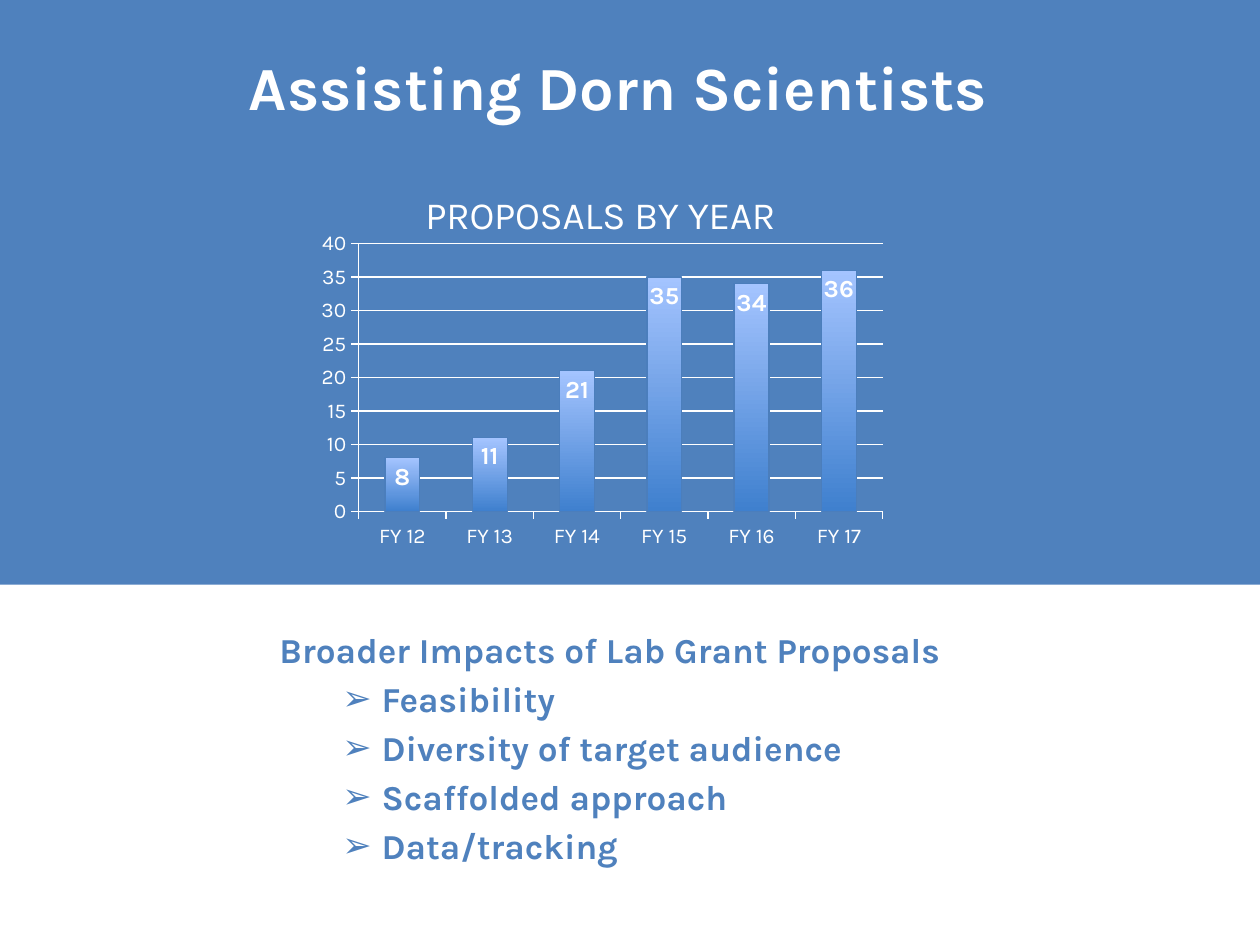
"""Build a slide with a proposals-by-year chart above a list of impact criteria."""
from dataclasses import dataclass

from lxml import etree
from pptx import Presentation
from pptx.chart.data import CategoryChartData
from pptx.dml.color import RGBColor
from pptx.enum.chart import XL_CHART_TYPE, XL_LABEL_POSITION, XL_TICK_MARK
from pptx.enum.shapes import MSO_SHAPE
from pptx.enum.text import MSO_ANCHOR, PP_ALIGN
from pptx.oxml.ns import qn
from pptx.util import Inches, Pt

COLUMN = XL_CHART_TYPE.COLUMN_STACKED
INSIDE_END = XL_LABEL_POSITION.INSIDE_END
TICK_OUT = XL_TICK_MARK.OUTSIDE
RECT = MSO_SHAPE.RECTANGLE
TOP, MIDDLE = MSO_ANCHOR.TOP, MSO_ANCHOR.MIDDLE
LEFT, CENTER = PP_ALIGN.LEFT, PP_ALIGN.CENTER


@dataclass(frozen=True)
class Theme:
    """Colours, fonts and type sizes."""
    white: str = "FFFFFF"
    blue: str = "4F81BD"
    bar_edge: str = "4B7EBC"
    bar_stops: tuple = ("3F80CE", "A4C4FF")
    font: str = "Karla"
    chart_font: str = "Calibri"
    title: int = 35
    body: int = 20
    chart_title: int = 22
    chart: int = 18
    label: int = 14
    axis: int = 12


THEME = Theme()
TITLE = "Assisting Dorn Scientists"
HEADING = "Broader Impacts of Lab Grant Proposals"
CRITERIA = ["Feasibility", "Diversity of target audience", "Scaffolded approach", "Data/tracking"]
CHART_TITLE = "PROPOSALS BY YEAR"
PROPOSALS = {"FY 12": 8, "FY 13": 11, "FY 14": 21, "FY 15": 35, "FY 16": 34, "FY 17": 36}

BANDS = [((0, 0, 10, 7.5), THEME.white), ((0, 0, 10, 4.64), THEME.blue)]
TITLE_BOX = (0.7, 0.16, 8.42, 1.04)
BODY_BOX = (2.12, 4.94, 5.76, 2.33)
CHART_BOX = (2.28, 1.29, 4.73, 3.22)
TITLE_LAYOUT = {"xMode": "edge", "yMode": "edge", "x": 0.22, "y": 0.05}
PLOT_LAYOUT = {"layoutTarget": "inner", "xMode": "edge", "yMode": "edge",
               "x": 0.12, "y": 0.2, "w": 0.88, "h": 0.66}


def rgb(value):
    return RGBColor.from_string(value)


def style_font(font, size, color=THEME.white, bold=False, name=THEME.font):
    font.size, font.bold, font.name = Pt(size), bold, name
    font.color.rgb = rgb(color)


def style_line(line, color=THEME.white):
    line.color.rgb = rgb(color)
    line.width = Pt(0.75)


def add_band(slide, box, color):
    sp = slide.shapes.add_shape(RECT, *map(Inches, box))
    sp.shadow.inherit = False
    sp.fill.solid()
    sp.fill.fore_color.rgb = rgb(color)
    sp.line.fill.background()


def add_bullet(p, char="➢", margin=0.81, indent=-0.31):
    pPr = p._p.get_or_add_pPr()
    pPr.set("marL", str(Inches(margin)))
    pPr.set("indent", str(Inches(indent)))
    etree.SubElement(pPr, qn("a:buFont")).set("typeface", THEME.font)
    etree.SubElement(pPr, qn("a:buChar")).set("char", char)


def add_text(slide, box, lines, *, size, color, align=LEFT, anchor=TOP, before=0, bullets_from=None):
    tf = slide.shapes.add_textbox(*map(Inches, box)).text_frame
    tf.word_wrap, tf.vertical_anchor = True, anchor
    for i, line in enumerate(lines):
        p = tf.add_paragraph() if i else tf.paragraphs[0]
        p.alignment, p.space_before = align, Pt(before)
        if bullets_from is not None and i >= bullets_from:
            p.level = 1
            add_bullet(p)
        r = p.add_run()
        r.text = line
        style_font(r.font, size, color, bold=True)


def set_layout(parent, index, values):
    for old in parent.findall(qn("c:layout")):
        parent.remove(old)
    layout = etree.Element(qn("c:layout"))
    manual = etree.SubElement(layout, qn("c:manualLayout"))
    for key, value in values.items():
        etree.SubElement(manual, qn(f"c:{key}")).set("val", str(value))
    parent.insert(index, layout)


def add_proposals_chart(slide):
    data = CategoryChartData()
    data.categories = list(PROPOSALS)
    data.add_series("Series 1", list(PROPOSALS.values()))
    chart = slide.shapes.add_chart(COLUMN, *map(Inches, CHART_BOX), data).chart
    style_font(chart.font, THEME.chart, name=THEME.chart_font)
    chart.has_legend = False

    chart.has_title = True
    p = chart.chart_title.text_frame.paragraphs[0]
    r = p.add_run()
    r.text = CHART_TITLE
    style_font(r.font, THEME.chart_title)
    chart.chart_title.include_in_layout = False
    set_layout(chart.chart_title._element, 1, TITLE_LAYOUT)
    set_layout(chart._chartSpace.chart.plotArea, 0, PLOT_LAYOUT)

    for axis in (chart.category_axis, chart.value_axis):
        axis.major_tick_mark = TICK_OUT
        style_font(axis.tick_labels.font, THEME.axis)
        style_line(axis.format.line)
    axis = chart.value_axis
    axis.minimum_scale, axis.maximum_scale, axis.major_unit = 0, 40, 5
    axis.has_major_gridlines = True
    style_line(axis.major_gridlines.format.line)

    plot = chart.plots[0]
    plot.gap_width, plot.overlap, plot.vary_by_categories = 150, 100, False
    bars = plot.series[0]
    bars.invert_if_negative = False
    fill = bars.format.fill
    fill.gradient()
    fill.gradient_angle = 90
    for stop, color in zip(fill.gradient_stops, THEME.bar_stops):
        stop.color.rgb = rgb(color)
    style_line(bars.format.line, THEME.bar_edge)
    labels = bars.data_labels
    labels.show_value, labels.position = True, INSIDE_END
    style_font(labels.font, THEME.label, bold=True)


def main():
    prs = Presentation()
    prs.slide_width, prs.slide_height = Inches(10), Inches(7.5)
    s = prs.slides.add_slide(prs.slide_layouts[6])
    for box, color in BANDS:
        add_band(s, box, color)
    add_text(s, TITLE_BOX, [TITLE], size=THEME.title, color=THEME.white, align=CENTER, anchor=MIDDLE)
    add_text(s, BODY_BOX, [HEADING, *CRITERIA], size=THEME.body, color=THEME.blue,
             before=4, bullets_from=1)
    add_proposals_chart(s)
    prs.save("out.pptx")


if __name__ == "__main__":
    main()
